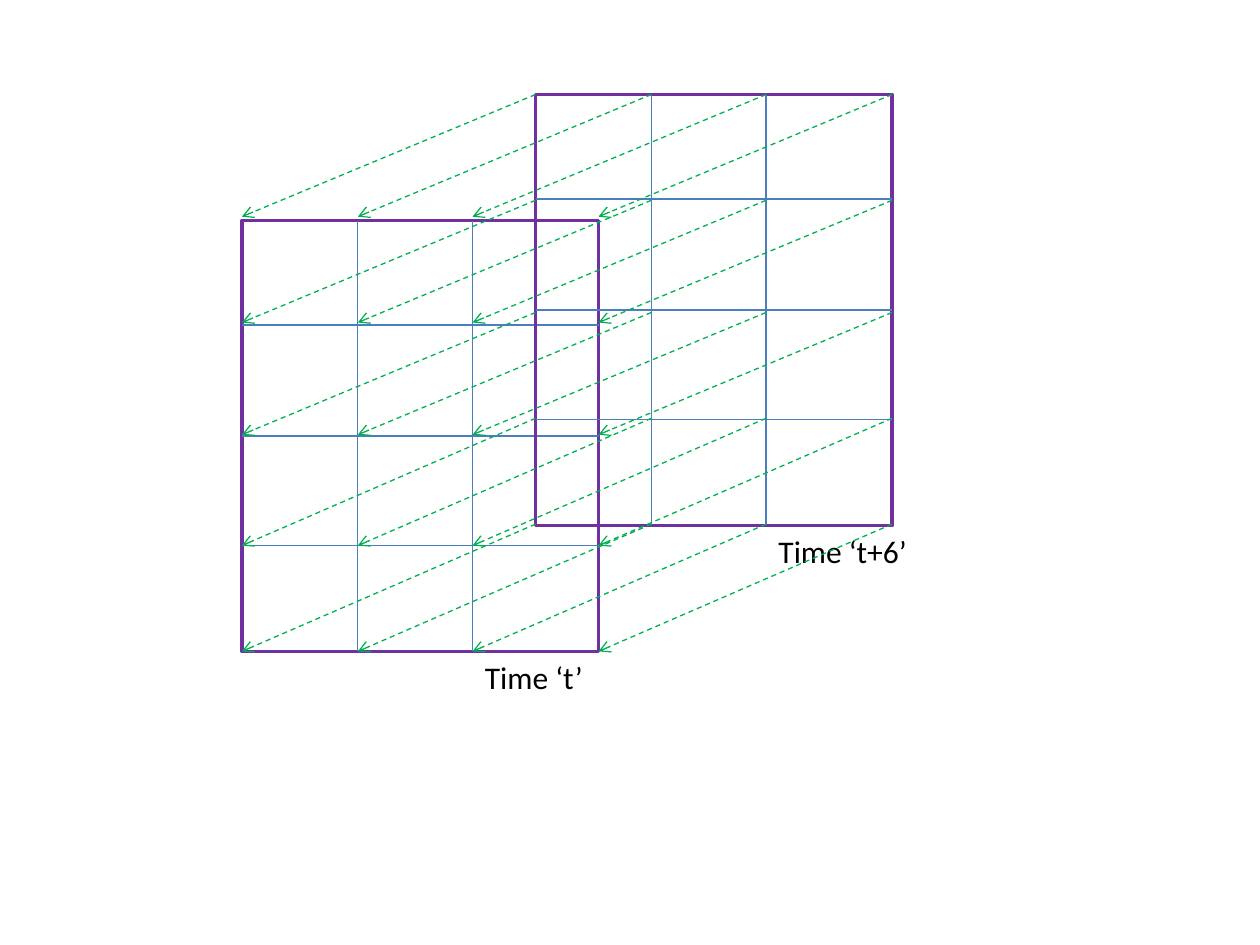
import pptx
import pptx.dml.color
import pptx.enum.dml
import pptx.enum.shapes
import pptx.enum.text
import pptx.oxml.ns
import pptx.util
from lxml import etree
from pptx.util import Inches

PURPLE, BLUE, GREEN, BLACK = "7030A0", "4B7EBC", "00B050", "000000"

# Grid line offsets from the top left corner of a grid
COLUMNS = [0, 0.92, 1.83, 2.83]
ROWS = [0, 0.83, 1.71, 2.58, 3.42]
# Arrow offsets: (from the later grid's top, to the earlier grid's top)
ARROW_ROWS = [(0, -0.03), (0.84, 0.81), (1.73, 1.7), (2.57, 2.58), (3.41, 3.42)]


def color(hex_value):
    return pptx.dml.color.RGBColor.from_string(hex_value)


def add_line(shapes, x1, y1, x2, y2, line_color):
    line = shapes.add_connector(
        pptx.enum.shapes.MSO_CONNECTOR.STRAIGHT,
        Inches(x1), Inches(y1), Inches(x2), Inches(y2))
    line.line.color.rgb = color(line_color)
    line.line.width = pptx.util.Pt(0.75)
    etree.SubElement(line._element.spPr, pptx.oxml.ns.qn("a:effectLst"))
    return line


def add_grid(slide, left, top):
    shapes = slide.shapes.add_group_shape().shapes
    width, height = COLUMNS[-1], ROWS[-1]

    # Outer frame
    frame = shapes.add_shape(
        pptx.enum.shapes.MSO_SHAPE.RECTANGLE,
        Inches(left), Inches(top), Inches(width), Inches(height))
    frame.shadow.inherit = False
    frame.fill.background()
    frame.line.color.rgb = color(PURPLE)
    frame.line.width = pptx.util.Pt(2)

    # Inner lines
    for x in COLUMNS[1:-1]:
        add_line(shapes, left + x, top, left + x, top + height, BLUE)
    for y in ROWS[1:-1]:
        row_line = add_line(shapes, left, top + y, left + width, top + y, BLUE)
        if y == height / 2:
            row_line.begin_connect(frame, 1)
            row_line.end_connect(frame, 3)


def add_label(slide, text, left, top, width, height):
    label = slide.shapes.add_textbox(
        Inches(left), Inches(top), Inches(width), Inches(height))
    label.text_frame.word_wrap = False
    label.text_frame.auto_size = pptx.enum.text.MSO_AUTO_SIZE.SHAPE_TO_FIT_TEXT
    paragraph = label.text_frame.paragraphs[0]
    paragraph.text = text
    paragraph.font.name = "Calibri"
    paragraph.font.size = pptx.util.Pt(18)
    paragraph.font.color.rgb = color(BLACK)


def add_time_arrows(slide, later, earlier):
    for x in COLUMNS:
        for start, end in ARROW_ROWS:
            arrow = add_line(slide.shapes, later[0] + x, later[1] + start,
                             earlier[0] + x, earlier[1] + end, GREEN)
            arrow.line.dash_style = pptx.enum.dml.MSO_LINE.DASH
            etree.SubElement(arrow.line._get_or_add_ln(),
                             pptx.oxml.ns.qn("a:tailEnd"), type="arrow")


def main():
    presentation = pptx.Presentation()
    presentation.slide_width = Inches(10)
    presentation.slide_height = Inches(7.5)
    slide = presentation.slides.add_slide(presentation.slide_layouts[6])

    earlier, later = (1.92, 1.75), (4.25, 0.75)
    add_grid(slide, *earlier)
    add_grid(slide, *later)
    add_label(slide, "Time ‘t’", 3.75, 5.17, 0.99, 0.4)
    add_label(slide, "Time ‘t+6’", 6.08, 4.17, 1.23, 0.4)
    add_time_arrows(slide, later, earlier)

    presentation.save("out.pptx")


if __name__ == "__main__":
    main()
